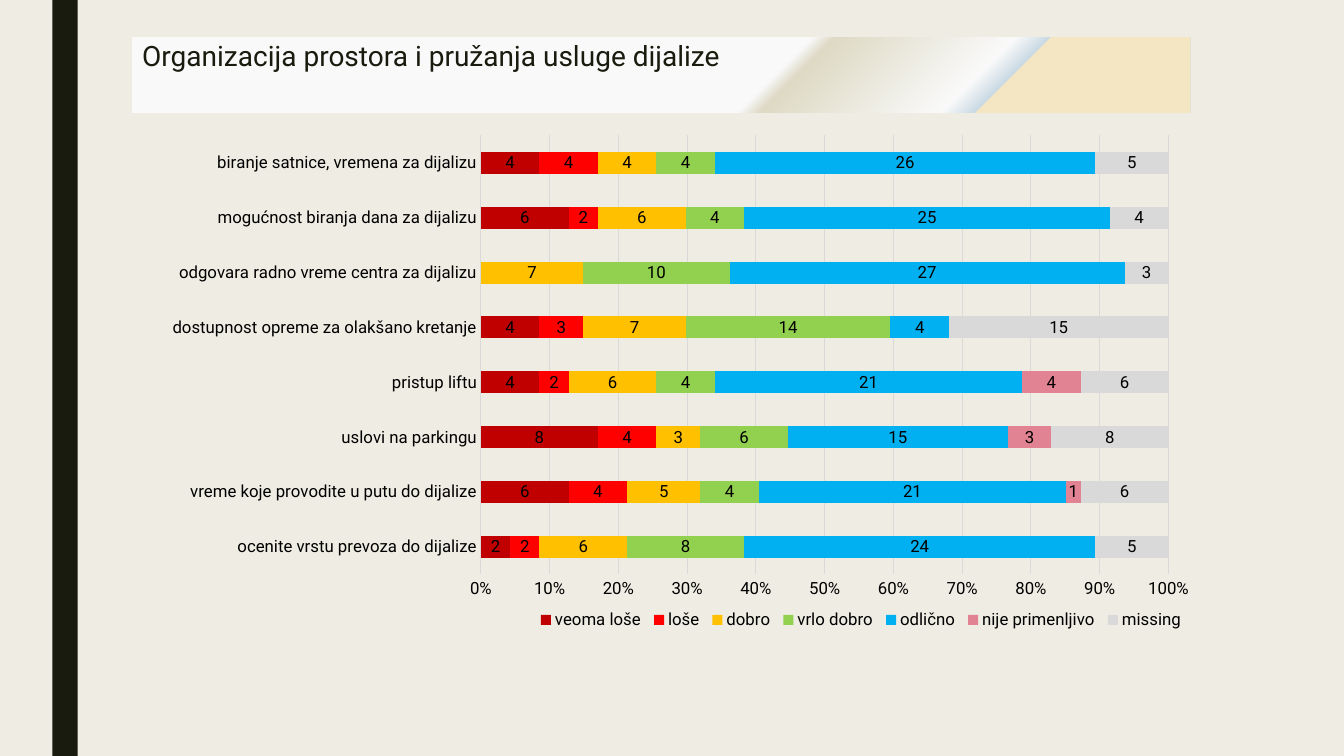
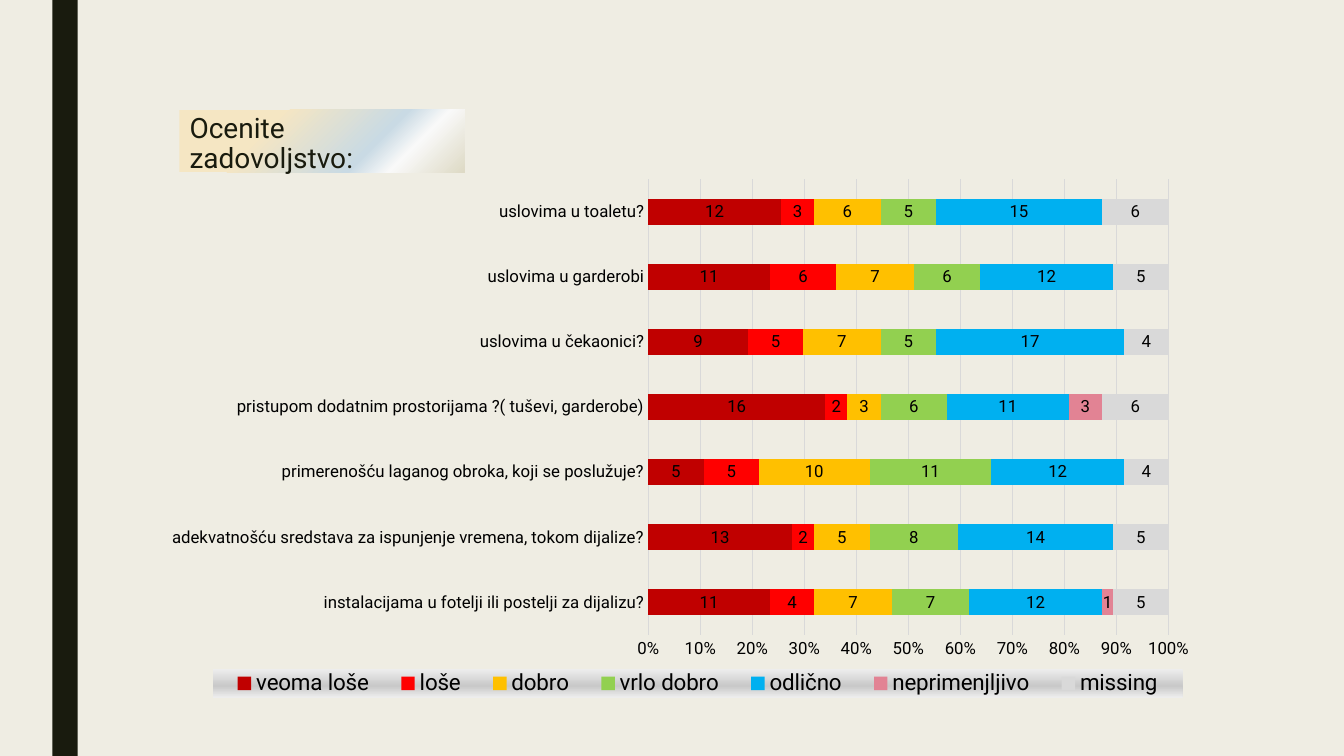
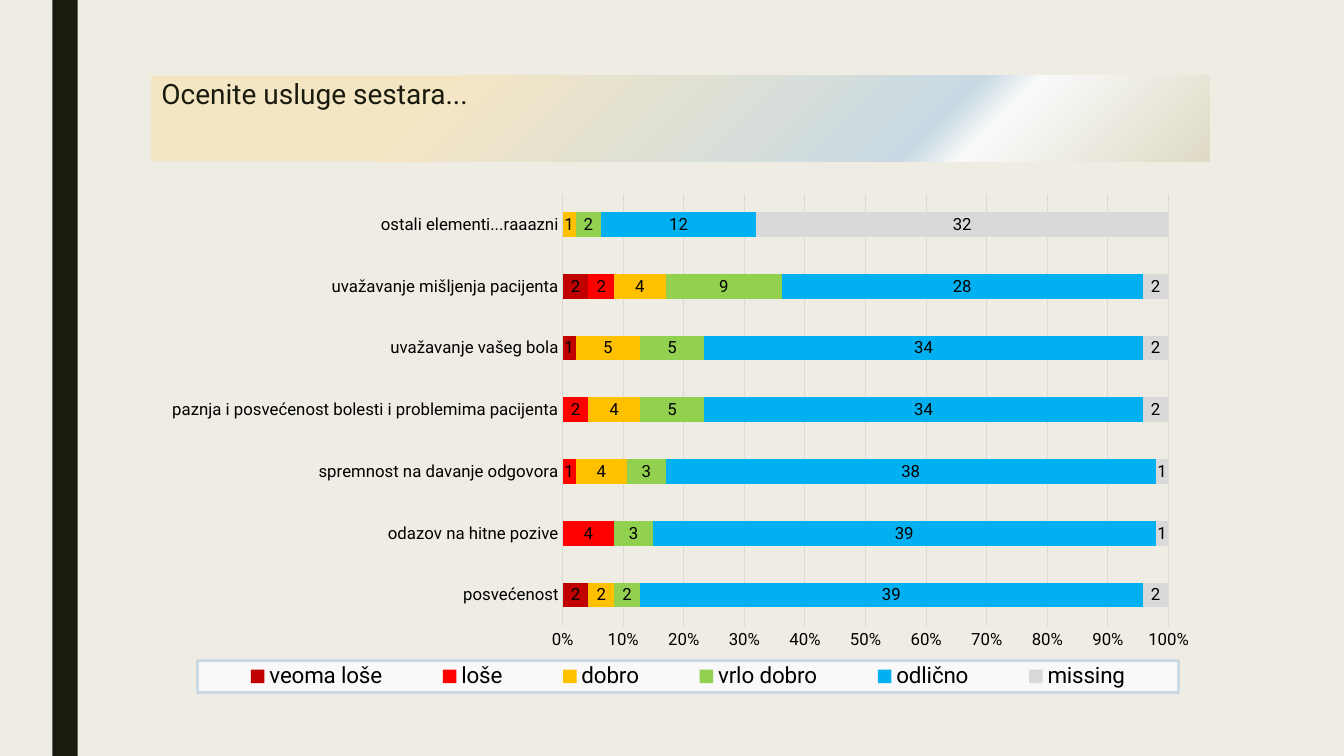
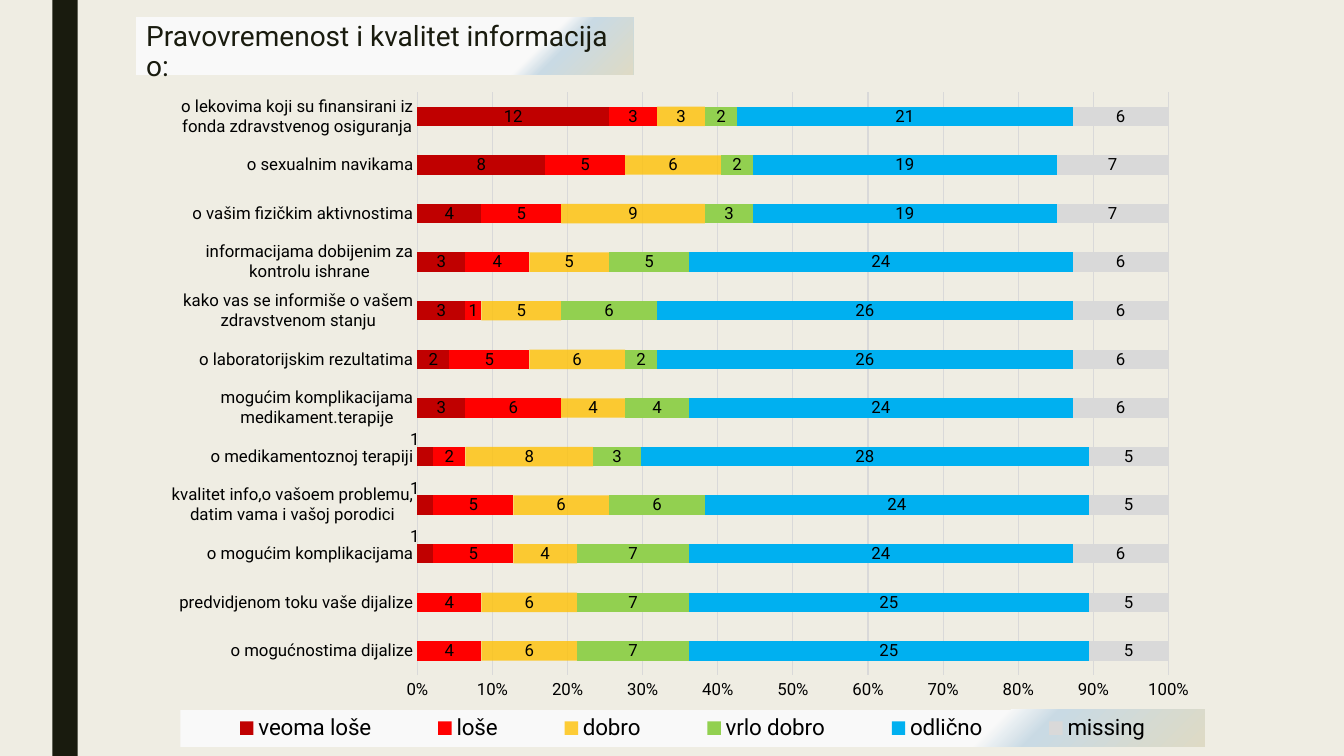
from dataclasses import dataclass

from lxml import etree
from pptx import Presentation
from pptx.chart.data import CategoryChartData
from pptx.dml.color import RGBColor
from pptx.enum.chart import (
    XL_CHART_TYPE, XL_LABEL_POSITION, XL_LEGEND_POSITION, XL_TICK_MARK)
from pptx.enum.shapes import MSO_SHAPE
from pptx.enum.text import MSO_ANCHOR, PP_ALIGN
from pptx.oxml import parse_xml
from pptx.oxml.ns import nsdecls, qn
from pptx.util import Inches, Pt


@dataclass(frozen=True)
class Theme:
    font: str = "Roboto"
    back: str = "EFEDE3"
    dark: str = "191B0E"
    text: str = "000000"
    grid: str = "D9D9D9"
    white: str = "F9F9F9"
    sand: str = "DEDAC5"
    sky: str = "C9DAE4"
    cream: str = "F5E6C3"
    pale: str = "EDEDED"
    grey: str = "C9C9C9"
    head: int = 20
    label: int = 12
    key: int = 16


T = Theme()
LEFT, WIDE, RIGHT = 1.5, 10.5, 11.59  # chart left and width, plot right edge
GAP = 0.34                            # from plot bottom to legend top
TOTAL = 47                            # answers to each question
LAST = "missing"                      # the rest of the answers

TONES = {
    "veoma loše": "C00000",
    "loše": "FF0000",
    "dobro": "FFC000",
    "vrlo dobro": "92D050",
    "odlično": "00B0F0",
    "nije primenljivo": "E28394",
    "neprimenjljivo": "E28394",
    LAST: "D9D9D9",
}
MARKS = ["veoma loše", "loše", "dobro", "vrlo dobro", "odlično"]
FADE = [(78, T.white), (83, T.sky), (100, T.sand)]

# Boxes are left, top, width, height. Gradients are (percent, colour).
# Rows run from the bottom bar up: label, then one count for each mark.
SLIDES = [
    {
        "title": "Organizacija prostora i pružanja usluge dijalize",
        "box": (1.31, 0.37, 10.5, 0.75),
        "grad": [(60, T.white), (62, T.sand), (78, T.white), (81, T.sky),
                 (81, T.cream)],
        "chart": (1.24, 5.18),
        "axis": 4.77,
        "key": {"box": (5.29, 6.04, 6.5, 0.22), "size": T.label},
        "marks": MARKS + ["nije primenljivo"],
        "rows": """
            ocenite vrstu prevoza do dijalize | 2 2 6 8 24 -
            vreme koje provodite u putu do dijalize | 6 4 5 4 21 1
            uslovi na parkingu | 8 4 3 6 15 3
            pristup liftu | 4 2 6 4 21 4
            dostupnost opreme za olakšano kretanje | 4 3 7 14 4 -
            odgovara radno vreme centra za dijalizu | - - 7 10 27 -
            mogućnost biranja dana za dijalizu | 6 2 6 4 25 -
            biranje satnice, vremena za dijalizu | 4 4 4 4 26 -
        """,
    },
    {
        "title": "Ocenite zadovoljstvo:",
        "box": (1.78, 1.09, 2.83, 0.62),
        "grad": [(30, T.cream), (66, T.sky), (78, T.white), (100, T.sand)],
        "chart": (1.67, 5.36),
        "axis": 6.43,
        "key": {"box": (2.11, 6.64, 9.62, 0.28), "size": T.key, "turn": 90,
                "grad": [(0, T.pale), (60, T.grey), (100, T.pale)]},
        "marks": MARKS + ["neprimenjljivo"],
        "rows": """
            instalacijama u fotelji ili postelji za dijalizu? | 11 4 7 7 12 1
            adekvatnošću sredstava za ispunjenje vremena, tokom dijalize? | 13 2 5 8 14 -
            primerenošću laganog obroka, koji se poslužuje? | 5 5 10 11 12 -
            pristupom dodatnim prostorijama ?( tuševi, garderobe) | 16 2 3 6 11 3
            uslovima u čekaonici? | 9 5 7 5 17 -
            uslovima u garderobi | 11 6 7 6 12 -
            uslovima u toaletu? | 12 3 6 5 15 -
        """,
    },
    {
        "title": "Ocenite usluge sestara...",
        "box": (1.5, 0.75, 10.5, 0.85),
        "grad": [(25, T.cream), (73, T.sky), (78, T.white), (100, T.sand)],
        "chart": (1.82, 5.13),
        "axis": 5.58,
        "key": {"box": (1.96, 6.55, 9.73, 0.32), "size": T.key,
                "grad": [(0, T.white), (100, T.white)], "line": T.sky},
        "marks": MARKS,
        "rows": """
            posvećenost | 2 - 2 2 39
            odazov na hitne pozive | - 4 - 3 39
            spremnost na davanje odgovora | - 1 4 3 38
            paznja i posvećenost bolesti i problemima pacijenta | - 2 4 5 34
            uvažavanje vašeg bola | 1 - 5 5 34
            uvažavanje mišljenja pacijenta | 2 2 4 9 28
            ostali elementi...raaazni | - - 1 2 12
        """,
    },
    {
        "title": "Pravovremenost i kvalitet informacija o:",
        "box": (1.35, 0.17, 4.93, 0.57),
        "grad": FADE,
        "chart": (0.78, 6.72),
        "axis": 4.14,
        "key": {"box": (1.79, 7.04, 10.16, 0.37), "size": T.key,
                "grad": FADE},
        "alpha": {"dobro": 78},
        "shift": {"veoma loše": 1},
        "marks": MARKS,
        "rows": """
            o mogućnostima dijalize | - 4 6 7 25
            predvidjenom toku vaše dijalize | - 4 6 7 25
            o mogućim komplikacijama | 1 5 4 7 24
            kvalitet info,o vašoem problemu, / datim vama i vašoj porodici | 1 5 6 6 24
            o medikamentoznoj terapiji | 1 2 8 3 28
            mogućim komplikacijama / medikament.terapije | 3 6 4 4 24
            o laboratorijskim rezultatima | 2 5 6 2 26
            kako vas se informiše o vašem / zdravstvenom stanju | 3 1 5 6 26
            informacijama dobijenim za / kontrolu ishrane | 3 4 5 5 24
            o vašim fizičkim aktivnostima | 4 5 9 3 19
            o sexualnim navikama | 8 5 6 2 19
            o lekovima koji su finansirani iz / fonda zdravstvenog osiguranja | 12 3 3 2 21
        """,
    },
]


def rgb(tone):
    return RGBColor.from_string(tone)


def style(font, size, tone=T.text):
    font.name, font.size, font.bold = T.font, Pt(size), False
    font.color.rgb = rgb(tone)


def blend(stops, turn=45):
    """Return a linear gradient fill element."""
    parts = "".join(
        f'<a:gs pos="{pos * 1000}"><a:srgbClr val="{tone}"/></a:gs>'
        for pos, tone in stops)
    return parse_xml(
        f'<a:gradFill {nsdecls("a")} rotWithShape="1"><a:gsLst>{parts}'
        f'</a:gsLst><a:lin ang="{turn * 60000}" scaled="0"/></a:gradFill>')


def layout(inner=False, **places):
    """Return a manual chart layout; places are fractions of the chart."""
    names = ["xMode", "yMode"] if "w" in places else []
    pairs = [("layoutTarget", "inner")] if inner else []
    pairs += [(name, "edge") for name in names]
    pairs += [(name, round(val, 4)) for name, val in places.items()]
    parts = "".join(f'<c:{name} val="{val}"/>' for name, val in pairs)
    return parse_xml(f'<c:layout {nsdecls("c")}><c:manualLayout>{parts}'
                     '</c:manualLayout></c:layout>')


def place(node, spot, new):
    """Put a layout into a chart part, in place of any it has."""
    for old in node.findall(qn("c:layout")):
        node.remove(old)
    node.insert(spot, new)


def share(box, top, high):
    """Turn a box in inches into fractions of the chart."""
    x, y, w, h = box
    return {"x": (x - LEFT) / WIDE, "y": (y - top) / high,
            "w": w / WIDE, "h": h / high}


def set_base(deck, slide):
    """Give the master its background and dark side band."""
    master = deck.slide_master
    fill = master.background.fill
    fill.solid()
    fill.fore_color.rgb = rgb(T.back)
    band = slide.shapes.add_shape(MSO_SHAPE.RECTANGLE, Inches(0.52), 0,
                                  Inches(0.25), deck.slide_height)
    band.shadow.inherit = False
    band.fill.solid()
    band.fill.fore_color.rgb = rgb(T.dark)
    band.line.fill.background()
    master.shapes.element.insert(2, band.element)


def set_title(slide, data):
    title = slide.shapes.title
    title.left, title.top, title.width, title.height = map(Inches, data["box"])
    frame = title.text_frame
    frame.text = data["title"]
    frame.word_wrap = True
    frame.vertical_anchor = MSO_ANCHOR.TOP
    para = frame.paragraphs[0]
    para.alignment, para.line_spacing = PP_ALIGN.LEFT, 0.89
    style(para.runs[0].font, T.head, T.dark)
    title.fill.background()
    props = title.element.spPr
    props.replace(props.find(qn("a:noFill")), blend(data["grad"]))


def read_rows(data):
    """Turn the rows into chart data, working out the last series."""
    names, counts = [], []
    for row in data["rows"].strip().splitlines():
        name, vals = row.split("|")
        names.append(name.strip().replace(" / ", "\n"))
        vals = [None if val == "-" else int(val) for val in vals.split()]
        counts.append(vals + [TOTAL - sum(val or 0 for val in vals)])
    table = CategoryChartData()
    table.categories = names
    for mark, vals in zip(data["marks"] + [LAST], zip(*counts)):
        table.add_series(mark, vals)
    return table


def set_axes(chart):
    cat, val = chart.category_axis, chart.value_axis
    for axis in (cat, val):
        axis.major_tick_mark = axis.minor_tick_mark = XL_TICK_MARK.NONE
        style(axis.tick_labels.font, T.label)
    val.has_major_gridlines = True
    for line in (cat.format.line, val.major_gridlines.format.line):
        line.color.rgb = rgb(T.grid)
        line.width = Pt(0.75)
    cat.has_major_gridlines = False
    val.format.line.fill.background()
    val.tick_labels.number_format = "0%"
    val.tick_labels.number_format_is_linked = False


def set_label(label):
    label.position = XL_LABEL_POSITION.CENTER
    style(label.font, T.label)


def set_bars(chart, data):
    plot = chart.plots[0]
    plot.gap_width, plot.overlap = 150, 100
    plot.vary_by_categories = False
    for row in plot.series:
        fill = row.format.fill
        fill.solid()
        fill.fore_color.rgb = rgb(TONES[row.name])
        alpha = data.get("alpha", {}).get(row.name)
        if alpha:
            tone = next(row._element.iter(qn("a:srgbClr")))
            etree.SubElement(tone, qn("a:alpha")).set("val", str(alpha * 1000))
        row.data_labels.show_value = True
        set_label(row.data_labels)
        small = data.get("shift", {}).get(row.name)
        for spot, val in enumerate(row.values):
            if small and val == small:
                set_label(row.points[spot].data_label)
        for node in row._element.iter(qn("c:dLbl")):
            place(node, 1, layout(x=-0.01, y=-0.025))


def set_key(chart, key, top, high):
    chart.has_legend = True
    legend = chart.legend
    legend.position = XL_LEGEND_POSITION.BOTTOM
    legend.include_in_layout = False
    style(legend.font, key["size"])
    node = next(chart.element.iter(qn("c:legend")))
    place(node, 1, layout(**share(key["box"], top, high)))
    if "grad" in key:
        props = parse_xml(f'<c:spPr {nsdecls("c", "a")}/>')
        props.append(blend(key["grad"], key.get("turn", 45)))
        if "line" in key:
            props.append(parse_xml(
                f'<a:ln {nsdecls("a")} w="28575"><a:solidFill>'
                f'<a:srgbClr val="{key["line"]}"/></a:solidFill></a:ln>'))
        node.find(qn("c:txPr")).addprevious(props)


def add_bars(slide, data):
    top, high = data["chart"]
    chart = slide.shapes.add_chart(
        XL_CHART_TYPE.BAR_STACKED_100, Inches(LEFT), Inches(top),
        Inches(WIDE), Inches(high), read_rows(data)).chart
    chart.has_title = False
    style(chart.font, T.label)
    set_axes(chart)
    set_bars(chart, data)
    set_key(chart, data["key"], top, high)
    x, y = data["axis"], top + high / 50
    low = data["key"]["box"][1] - GAP
    area = next(chart.element.iter(qn("c:plotArea")))
    box = (x, y, RIGHT - x, low - y)
    place(area, 0, layout(inner=True, **share(box, top, high)))


def main():
    deck = Presentation()
    deck.slide_width, deck.slide_height = Inches(13.33), Inches(7.5)
    for spot, data in enumerate(SLIDES):
        slide = deck.slides.add_slide(deck.slide_layouts[5])
        if spot == 0:
            set_base(deck, slide)
        set_title(slide, data)
        add_bars(slide, data)
    deck.save("out.pptx")


if __name__ == "__main__":
    main()
